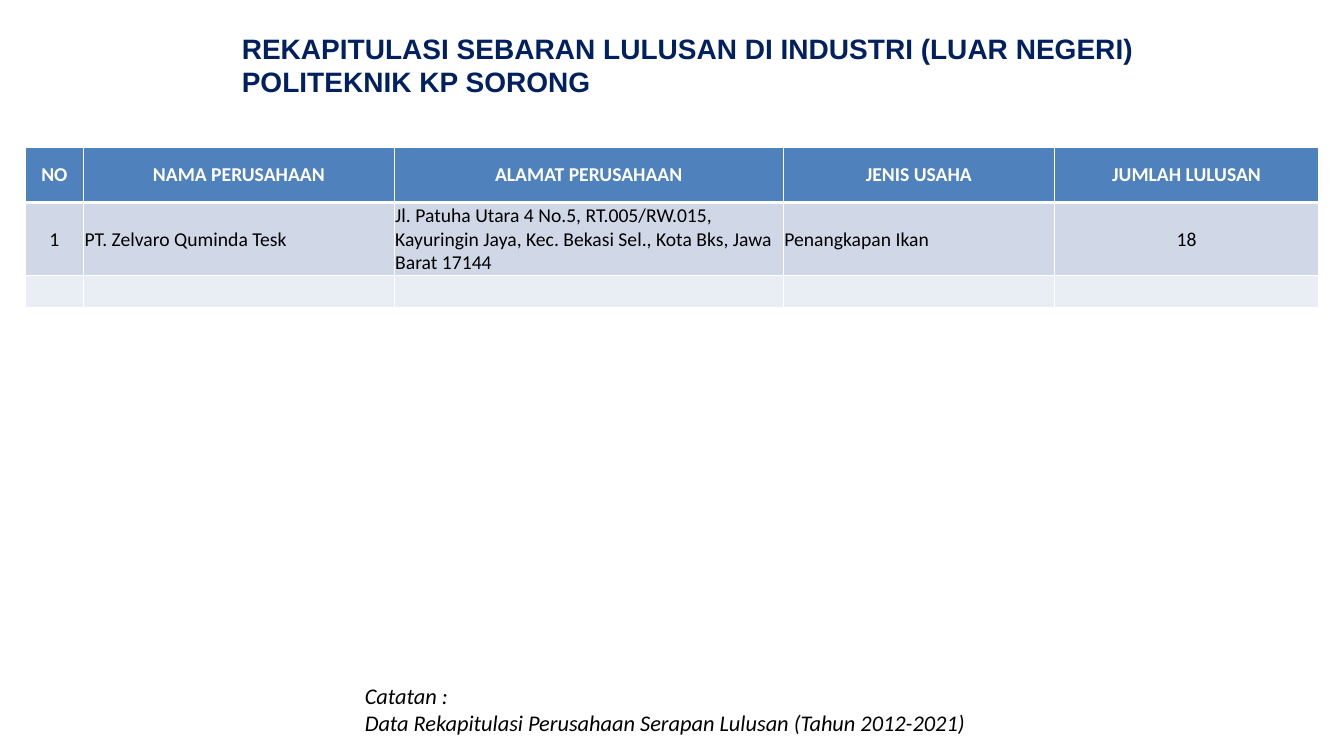
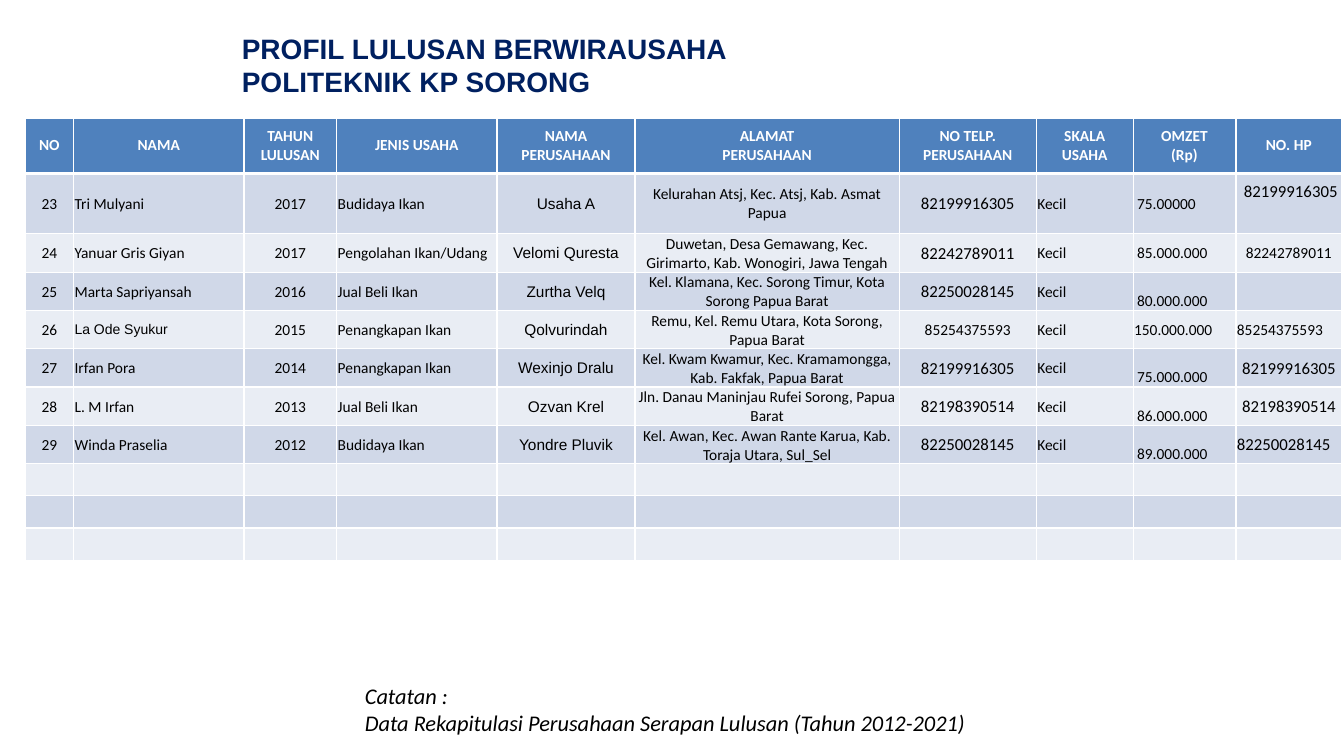
from dataclasses import dataclass, replace

from lxml.etree import SubElement
from pptx import Presentation
from pptx.dml.color import RGBColor
from pptx.enum.text import MSO_ANCHOR, MSO_AUTO_SIZE, PP_ALIGN
from pptx.oxml.ns import qn
from pptx.util import Inches, Pt

# Shared look
NAVY, BLACK, WHITE = "002060", "000000", "FFFFFF"
HEADER_FILL = "4F81BD"
BAND_FILLS = ("D0D8E8", "E9EDF4")
TABLE_LEFT = 0.25
HEADER_HEIGHT, EMPTY_HEIGHT = 0.55, 0.32
THIN, THICK = 1, 3
INSTITUTION = "POLITEKNIK KP SORONG"
NOTE_LINES = ("Catatan :", "Data Rekapitulasi Perusahaan Serapan Lulusan (Tahun 2012-2021)")


@dataclass
class Style:
    size: float
    font: str = "Calibri"
    color: str = BLACK
    bold: bool = False
    italic: bool = False
    align: PP_ALIGN = PP_ALIGN.LEFT
    anchor: MSO_ANCHOR = MSO_ANCHOR.MIDDLE
    margins: tuple = (0.01, 0.01, 0.01, 0)


@dataclass
class Column:
    header: str
    width: float
    style: Style


TITLE_STYLE = Style(20, "Arial", NAVY, bold=True)
NOTE_STYLE = Style(16, italic=True)


def rgb(value):
    return RGBColor.from_string(value)


def centered(size, font="Calibri"):
    return Style(size, font, align=PP_ALIGN.CENTER)


def header_style(size):
    return Style(size, color=WHITE, bold=True, align=PP_ALIGN.CENTER,
                 margins=(0.08, 0.04, 0.08, 0.04))


# Text
def write_lines(text_frame, lines, style):
    for index, line in enumerate(lines):
        paragraph = text_frame.add_paragraph() if index else text_frame.paragraphs[0]
        paragraph.alignment = style.align
        run = paragraph.add_run()
        run.text = line
        run.font.name = style.font
        run.font.size = Pt(style.size)
        run.font.bold = style.bold
        run.font.italic = style.italic
        run.font.color.rgb = rgb(style.color)


def add_text(slide, left, top, width, height, lines, style):
    shape = slide.shapes.add_textbox(Inches(left), Inches(top), Inches(width), Inches(height))
    shape.text_frame.word_wrap = True
    shape.text_frame.auto_size = MSO_AUTO_SIZE.SHAPE_TO_FIT_TEXT
    write_lines(shape.text_frame, lines, style)


def add_title(slide, title):
    add_text(slide, 2.3, 0.26, 10.5, 0.77, (title, INSTITUTION), TITLE_STYLE)


def add_note(slide, width):
    add_text(slide, 3.52, 6.72, width, 0.64, NOTE_LINES, NOTE_STYLE)


# Table cells
def set_borders(cell, top, bottom):
    properties = cell._tc.get_or_add_tcPr()
    widths = (("a:lnL", THIN), ("a:lnR", THIN), ("a:lnT", top), ("a:lnB", bottom))
    for position, (tag, points) in enumerate(widths):
        line = SubElement(properties, qn(tag), w=str(Pt(points)))
        fill = SubElement(line, qn("a:solidFill"))
        SubElement(fill, qn("a:srgbClr"), val=WHITE)
        properties.insert(position, line)


def fill_cell(cell, text, style, fill, top=THIN, bottom=THIN):
    cell.fill.solid()
    cell.fill.fore_color.rgb = rgb(fill)
    set_borders(cell, top, bottom)
    cell.vertical_anchor = style.anchor
    (cell.margin_left, cell.margin_top,
     cell.margin_right, cell.margin_bottom) = map(Inches, style.margins)
    if text:
        write_lines(cell.text_frame, text.split("\n"), style)


def add_table(slide, top, columns, header_size, rows, heights, empty_rows, overrides=None):
    """Overrides maps (body row, column) to changed style fields."""
    overrides = overrides or {}
    body = rows + [[""] * len(columns)] * empty_rows
    all_heights = [HEADER_HEIGHT, *heights, *[EMPTY_HEIGHT] * empty_rows]
    width = sum(column.width for column in columns)
    table = slide.shapes.add_table(
        len(body) + 1, len(columns), Inches(TABLE_LEFT), Inches(top),
        Inches(width), Inches(sum(all_heights))).table
    table.horz_banding = False
    for row, height in zip(table.rows, all_heights):
        row.height = Inches(height)
    for index, column in enumerate(columns):
        table.columns[index].width = Inches(column.width)
        fill_cell(table.cell(0, index), column.header, header_style(header_size),
                  HEADER_FILL, bottom=THICK)
        for row_index, values in enumerate(body):
            style = replace(column.style, **overrides.get((row_index, index), {}))
            fill_cell(table.cell(row_index + 1, index), values[index], style,
                      BAND_FILLS[row_index % 2], top=THIN if row_index else THICK)


# Slides
def build_industry_slide(slide):
    columns = [
        Column("NO", 0.58, centered(14)),
        Column("NAMA PERUSAHAAN", 3.08, Style(14)),
        Column("ALAMAT PERUSAHAAN", 3.86, Style(14)),
        Column("JENIS USAHA", 2.69, Style(14)),
        Column("JUMLAH LULUSAN", 2.62, centered(14)),
    ]
    rows = [["1", "PT. Zelvaro Quminda Tesk",
             "Jl. Patuha Utara 4 No.5, RT.005/RW.015, Kayuringin Jaya, "
             "Kec. Bekasi Sel., Kota Bks, Jawa Barat 17144",
             "Penangkapan Ikan", "18"]]
    add_table(slide, 1.46, columns, 14, rows, [0.71], empty_rows=1)
    add_title(slide, "REKAPITULASI SEBARAN LULUSAN DI INDUSTRI (LUAR NEGERI)")
    add_note(slide, 8.06)


def build_entrepreneur_slide(slide):
    turnover = Style(11, anchor=MSO_ANCHOR.BOTTOM, margins=(0.04, 0.01, 0.01, 0))
    columns = [
        Column("NO", 0.48, centered(11)),
        Column("NAMA", 1.69, Style(11)),
        Column("TAHUN LULUSAN", 0.92, centered(11)),
        Column("JENIS USAHA", 1.59, Style(11)),
        Column("NAMA PERUSAHAAN", 1.37, centered(11, "Arial")),
        Column("ALAMAT\nPERUSAHAAN", 2.62, centered(11)),
        Column("NO TELP. PERUSAHAAN", 1.36, centered(12)),
        Column("SKALA USAHA", 0.96, Style(11)),
        Column("OMZET\n(Rp)", 1.02, turnover),
        Column("NO. HP", 1.05, centered(12)),
    ]
    rows = [
        ["23", "Tri Mulyani", "2017", "Budidaya Ikan", "Usaha A",
         "Kelurahan Atsj, Kec. Atsj, Kab. Asmat Papua",
         "82199916305", "Kecil", "75.00000", "82199916305"],
        ["24", "Yanuar Gris Giyan", "2017", "Pengolahan Ikan/Udang", "Velomi Quresta",
         "Duwetan, Desa Gemawang, Kec. Girimarto, Kab. Wonogiri, Jawa Tengah",
         "82242789011", "Kecil", "85.000.000", "82242789011"],
        ["25", "Marta Sapriyansah", "2016", "Jual Beli Ikan", "Zurtha Velq",
         "Kel. Klamana, Kec. Sorong Timur, Kota Sorong Papua Barat",
         "82250028145", "Kecil", "80.000.000", ""],
        ["26", "La Ode Syukur", "2015", "Penangkapan Ikan", "Qolvurindah",
         "Remu, Kel. Remu Utara, Kota Sorong, Papua Barat",
         "85254375593", "Kecil", "150.000.000", "85254375593"],
        ["27", "Irfan Pora", "2014", "Penangkapan Ikan", "Wexinjo Dralu",
         "Kel. Kwam Kwamur, Kec. Kramamongga, Kab. Fakfak, Papua Barat",
         "82199916305", "Kecil", "75.000.000", "82199916305"],
        ["28", "L. M Irfan", "2013", "Jual Beli Ikan", "Ozvan Krel",
         "Jln. Danau Maninjau Rufei Sorong, Papua Barat",
         "82198390514", "Kecil", "86.000.000", "82198390514"],
        ["29", "Winda Praselia", "2012", "Budidaya Ikan", "Yondre Pluvik",
         "Kel. Awan, Kec. Awan Rante Karua, Kab. Toraja Utara, Sul_Sel",
         "82250028145", "Kecil", "89.000.000", "82250028145"],
    ]
    middle = {"anchor": MSO_ANCHOR.MIDDLE}
    left = {"align": PP_ALIGN.LEFT}
    overrides = {
        (0, 8): middle,
        (0, 9): {**left, "anchor": MSO_ANCHOR.TOP, "margins": (0.08, 0.08, 0, 0)},
        (1, 8): middle,
        (1, 9): {"size": 11},
        (3, 1): {"size": 10, "font": "Arial"},
        (3, 6): {"size": 11},
        (3, 8): {**middle, "margins": (0.01, 0.01, 0.01, 0)},
        (3, 9): {**left, "size": 11},
        (6, 9): left,
    }
    add_title(slide, "PROFIL LULUSAN BERWIRAUSAHA")
    heights = [0.6] + [0.38] * (len(rows) - 1)
    add_table(slide, 1.17, columns, 11, rows, heights, empty_rows=3, overrides=overrides)
    add_note(slide, 6.89)


def main():
    presentation = Presentation()
    presentation.slide_width = Inches(13.33)
    presentation.slide_height = Inches(7.5)
    for build in (build_industry_slide, build_entrepreneur_slide):
        build(presentation.slides.add_slide(presentation.slide_layouts[6]))
    presentation.save("out.pptx")


if __name__ == "__main__":
    main()
